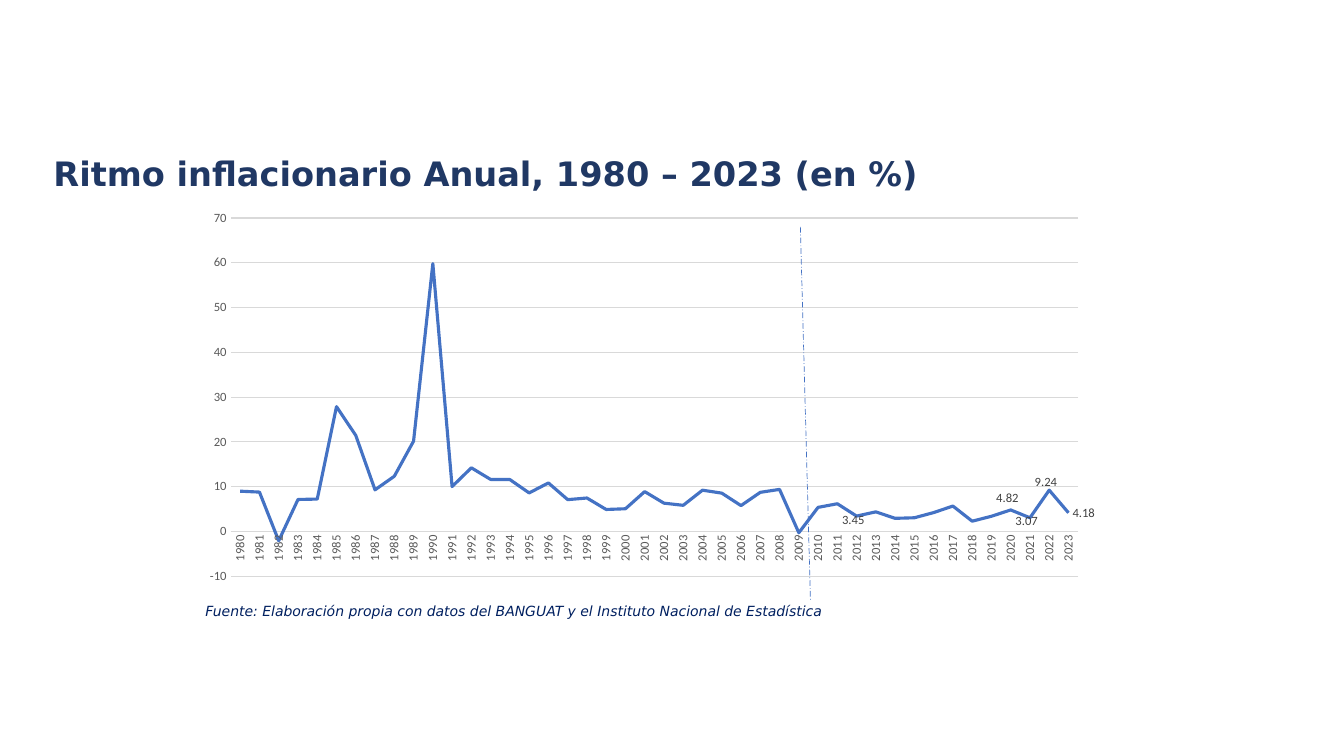
from lxml.etree import SubElement
from pptx import Presentation
from pptx.chart.data import CategoryChartData as Data
from pptx.dml.color import RGBColor
from pptx.enum.chart import XL_CHART_TYPE as Kind, XL_LABEL_POSITION as Spot
from pptx.enum.chart import XL_TICK_MARK as Tick
from pptx.enum.dml import MSO_LINE as Dash
from pptx.enum.shapes import MSO_CONNECTOR as Link
from pptx.enum.text import MSO_ANCHOR as Anchor, MSO_AUTO_SIZE as Fit, PP_ALIGN as Align
from pptx.oxml.ns import qn
from pptx.util import Pt

NAVY = RGBColor(0x20, 0x38, 0x64)
DEEP = RGBColor(0x00, 0x20, 0x60)
BLUE = RGBColor(0x44, 0x72, 0xC4)
GRAY = RGBColor(0x59, 0x59, 0x59)
DARK = RGBColor(0x40, 0x40, 0x40)
PALE = RGBColor(0xD9, 0xD9, 0xD9)
BLACK = RGBColor(0x00, 0x00, 0x00)

START = 1980
RATES = [
    9.01, 8.8, -2.07, 7.15, 7.24, 27.87, 21.45, 9.31, 12.34, 20.17, 59.81,
    10.03, 14.22, 11.63, 11.6, 8.62, 10.85, 7.12, 7.48, 4.92, 5.08, 8.91,
    6.33, 5.85, 9.23, 8.57, 5.79, 8.75, 9.4, -0.28, 5.39, 6.2, 3.45,
    4.39, 2.95, 3.07, 4.23, 5.68, 2.31, 3.41, 4.82, 3.07, 9.24, 4.18,
]
SHIFTS = {2012: (-0.02, 0.01), 2020: (-0.02, -0.03), 2021: (-0.02, 0.01),
          2022: (-0.02, -0.02), 2023: (0, 0)}


def style(font, name, size, color, bold=False, italic=False):
    """Set face, size, colour and slant of a font."""
    font.name, font.size = name, Pt(size)
    font.bold, font.italic = bold, italic
    font.color.rgb = color


def layout(host, index, rules):
    """Give a chart part a manual layout at a child index."""
    for old in host.findall(qn("c:layout")):
        host.remove(old)
    node = SubElement(host, qn("c:layout"))
    host.insert(index, node)
    manual = SubElement(node, qn("c:manualLayout"))
    for key, val in rules.items():
        SubElement(manual, qn("c:" + key)).set("val", str(val))


def title(slide, box):
    """Write the heading in the title placeholder."""
    head = slide.shapes.title
    head.left, head.top, head.width, head.height = map(Pt, box)
    frame = head.text_frame
    frame.vertical_anchor, frame.word_wrap = Anchor.MIDDLE, True
    frame.auto_size = Fit.NONE
    para = frame.paragraphs[0]
    para.alignment, para.line_spacing = Align.LEFT, 0.9
    run = para.add_run()
    run.text = "Ritmo inflacionario Anual, 1980 – 2023 (en %)"
    style(run.font, "DejaVu Sans", 24, NAVY, bold=True)


def source(slide, box):
    """Write the source note."""
    frame = slide.shapes.add_textbox(*map(Pt, box)).text_frame
    frame.word_wrap, frame.auto_size = True, Fit.SHAPE_TO_FIT_TEXT
    para = frame.paragraphs[0]
    para.line_spacing, para.space_after = 1.07, Pt(8)
    run = para.add_run()
    run.text = ("Fuente: Elaboración propia con datos del BANGUAT "
                "y el Instituto Nacional de Estadística")
    style(run.font, "DejaVu Sans", 10, DEEP, italic=True)


def axes(chart):
    """Format both axes and the grid."""
    years, scale = chart.category_axis, chart.value_axis
    for axis in (years, scale):
        axis.major_tick_mark = axis.minor_tick_mark = Tick.NONE
        style(axis.tick_labels.font, "Calibri", 9, GRAY)
    years.has_major_gridlines = False
    years.format.line.color.rgb, years.format.line.width = PALE, Pt(0.75)
    turn = years.tick_labels.font
    body = next(years._element.iter(qn("a:bodyPr")))
    body.set("rot", "-5400000")
    body.set("vert", "horz")
    turn.size = Pt(9)
    scale.minimum_scale, scale.maximum_scale, scale.major_unit = -10, 70, 10
    scale.format.line.fill.background()
    grid = scale.major_gridlines.format.line
    grid.color.rgb, grid.width = PALE, Pt(0.75)


def labels(line):
    """Show the values of the marked years."""
    line.data_labels.show_value = False
    for year in SHIFTS:
        tag = line.points[year - START].data_label
        style(tag.font, "Calibri", 9, DARK)
        tag.position = Spot.RIGHT
    for node, (x, y) in zip(line._element.iter(qn("c:dLbl")), SHIFTS.values()):
        layout(node, 1, {"x": x, "y": y})


def graph(slide, box):
    """Draw the inflation line chart."""
    data = Data()
    data.categories = [str(START + i) for i in range(len(RATES))]
    data.add_series("Series 1", RATES)
    chart = slide.shapes.add_chart(Kind.LINE, *map(Pt, box), data).chart
    chart.has_legend = chart.has_title = False
    style(chart.font, "Calibri", 10, BLACK)
    axes(chart)
    plot = chart.plots[0]
    plot.vary_by_categories = False
    line = plot.series[0]
    line.smooth = False
    line.format.line.color.rgb, line.format.line.width = BLUE, Pt(2.25)
    labels(line)
    layout(next(chart._chartSpace.iter(qn("c:plotArea"))), 0, {
        "layoutTarget": "inner", "xMode": "edge", "yMode": "edge",
        "x": 0.064, "y": 0.046, "w": 0.916, "h": 0.898})


def split(slide, box):
    """Draw the dashed line that parts the two periods."""
    x, y, wide, high = box
    rule = slide.shapes.add_connector(
        Link.STRAIGHT, Pt(x), Pt(y), Pt(x + wide), Pt(y + high))
    rule.line.color.rgb, rule.line.width = BLUE, Pt(0.5)
    rule.line.dash_style = Dash.LONG_DASH_DOT
    SubElement(rule._element.spPr, qn("a:effectLst"))


def main():
    """Build and save the slide."""
    deck = Presentation()
    deck.slide_width, deck.slide_height = Pt(960), Pt(540)
    slide = deck.slides.add_slide(deck.slide_layouts[5])
    title(slide, (31, 101.5, 828, 48.2))
    source(slide, (139.7, 426.2, 580.3, 19.4))
    graph(slide, (122.4, 142.6, 661, 285.1))
    split(slide, (571.7, 162, 7.2, 266.4))
    deck.save("out.pptx")


if __name__ == "__main__":
    main()
